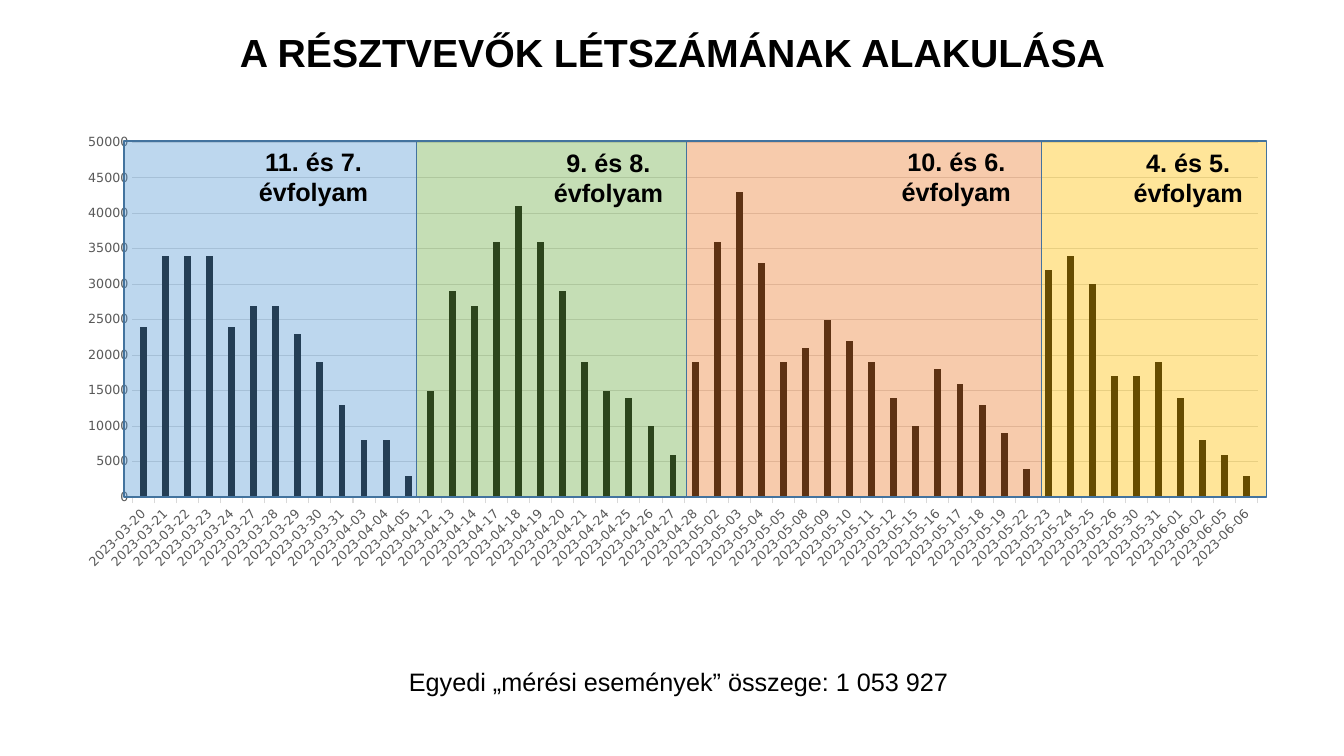
from lxml import etree
from pptx import Presentation
from pptx.chart.data import CategoryChartData
from pptx.dml.color import RGBColor
from pptx.enum.chart import XL_CHART_TYPE, XL_TICK_MARK
from pptx.enum.shapes import MSO_SHAPE
from pptx.enum.text import MSO_ANCHOR, PP_ALIGN
from pptx.oxml import parse_xml
from pptx.oxml.ns import nsdecls, qn
from pptx.util import Inches, Pt

COLUMNS = XL_CHART_TYPE.COLUMN_CLUSTERED
TICK_OUTSIDE, TICK_NONE = XL_TICK_MARK.OUTSIDE, XL_TICK_MARK.NONE
RECTANGLE = MSO_SHAPE.RECTANGLE
TOP, MIDDLE = MSO_ANCHOR.TOP, MSO_ANCHOR.MIDDLE
CENTER = PP_ALIGN.CENTER

COLORS = {
    "text": "000000", "bar": "000000", "axis": "595959", "grid": "D9D9D9",
    "border": "43739E", "blue": "5B9BD5", "green": "70AD47",
    "orange": "ED7D31", "yellow": "FFC000",
}
DAYS = {
    "2023-03": "20 21 22 23 24 27 28 29 30 31",
    "2023-04": "03 04 05 12 13 14 17 18 19 20 21 24 25 26 27 28",
    "2023-05": "02 03 04 05 08 09 10 11 12 15 16 17 18 19 22 23 24 25 26 30 31",
    "2023-06": "01 02 05 06",
}
THOUSANDS = [
    24, 34, 34, 34, 24, 27, 27, 23, 19, 13, 8, 8, 3,
    15, 29, 27, 36, 41, 36, 29, 19, 15, 14, 10, 6,
    19, 36, 43, 33, 19, 21, 25, 22, 19, 14, 10, 18, 16, 13, 9, 4,
    32, 34, 30, 17, 17, 19, 14, 8, 6, 3,
]
BANDS = [
    ("blue", 2.9, "11. és 7. évfolyam", 0.91, 0, 1.94),
    ("green", 2.68, "9. és 8. évfolyam", 0.85, 0.01, 2.11),
    ("orange", 3.52, "10. és 6. évfolyam", 1.62, 0, 2.11),
    ("yellow", 2.23, "4. és 5. évfolyam", 0.67, 0.01, 1.57),
]
PLOT_LAYOUT = {"x": 0.058, "y": 0.034, "w": 0.922, "h": 0.784}


def color(name):
    return RGBColor.from_string(COLORS[name])


def add_text(page, box, text, size, bold=False, anchor=TOP, spacing=1.0):
    shape = page.shapes.add_textbox(*map(Inches, box))
    frame = shape.text_frame
    frame.word_wrap = True
    frame.vertical_anchor = anchor
    para = frame.paragraphs[0]
    para.alignment = CENTER
    para.line_spacing = spacing
    span = para.add_run()
    span.text = text
    span.font.name = "Arial"
    span.font.size = Pt(size)
    span.font.bold = bold
    span.font.color.rgb = color("text")


def style_font(font, size, name):
    font.name = "DejaVu Sans"
    font.size = Pt(size)
    font.color.rgb = color(name)


def style_line(line, name, width):
    line.color.rgb = color(name)
    line.width = Pt(width)


def place_plot(chart):
    plot_area = chart.element.find(".//" + qn("c:plotArea"))
    for old in plot_area.findall(qn("c:layout")):
        plot_area.remove(old)
    layout = parse_xml(
        f'<c:layout {nsdecls("c")}><c:manualLayout><c:layoutTarget val="inner"/>'
        '<c:xMode val="edge"/><c:yMode val="edge"/></c:manualLayout></c:layout>')
    for side, share in PLOT_LAYOUT.items():
        etree.SubElement(layout[0], qn("c:" + side)).set("val", str(share))
    plot_area.insert(0, layout)


def add_attendance_chart(page, box):
    data = CategoryChartData(number_format="General")
    data.categories = [f"{month}-{day}" for month, days in DAYS.items()
                       for day in days.split()]
    data.add_series("Series 1", [count * 1000 for count in THOUSANDS])
    chart = page.shapes.add_chart(COLUMNS, *map(Inches, box), data).chart
    chart.has_title = False
    chart.has_legend = False
    style_font(chart.font, 10, "text")
    place_plot(chart)

    plot = chart.plots[0]
    plot.gap_width = 219
    plot.overlap = -27
    plot.vary_by_categories = False
    bars = plot.series[0].format.fill
    bars.solid()
    bars.fore_color.rgb = color("bar")

    dates, counts = chart.category_axis, chart.value_axis
    for axis in (dates, counts):
        style_font(axis.tick_labels.font, 9, "axis")
        axis.minor_tick_mark = TICK_NONE
    dates.major_tick_mark = TICK_OUTSIDE
    style_line(dates.format.line, "grid", 0.75)
    body = chart.element.find(".//" + qn("c:catAx")).find(".//" + qn("a:bodyPr"))
    body.set("rot", "-2700000")
    body.set("vert", "horz")

    counts.minimum_scale = 0
    counts.maximum_scale = 50000
    counts.major_unit = 5000
    counts.major_tick_mark = TICK_NONE
    counts.format.line.fill.background()
    counts.has_major_gridlines = True
    style_line(counts.major_gridlines.format.line, "grid", 0.75)


def add_band(page, box, name):
    band = page.shapes.add_shape(RECTANGLE, *map(Inches, box))
    band.shadow.inherit = False
    band.fill.solid()
    band.fill.fore_color.rgb = color(name)
    tint = band.fill._xPr.find(".//" + qn("a:srgbClr"))
    etree.SubElement(tint, qn("a:alpha")).set("val", "40000")
    style_line(band.line, "border", 1)


def add_grade_bands(page, left, top, height):
    labels = []
    for name, width, text, indent, drop, label_width in BANDS:
        add_band(page, (left, top, width, height), name)
        labels.append(((left + indent, top + drop, label_width, 0.71), text))
        left += width
    for box, text in labels:
        add_text(page, box, text, 18, bold=True)


def main():
    deck = Presentation()
    deck.slide_width, deck.slide_height = Inches(13.33), Inches(7.5)
    page = deck.slides.add_slide(deck.slide_layouts[6])
    add_text(page, (0.92, 0.21, 11.5, 0.66), "A RÉSZTVEVŐK LÉTSZÁMÁNAK ALAKULÁSA",
             28, bold=True, anchor=MIDDLE, spacing=0.9)
    add_text(page, (3.11, 6.56, 7.31, 0.4),
             "Egyedi „mérési események” összege: 1 053 927 ", 18)
    add_attendance_chart(page, (0.61, 1.26, 12.11, 4.49))
    add_grade_bands(page, 1.23, 1.4, 3.53)
    deck.save("out.pptx")


if __name__ == "__main__":
    main()
